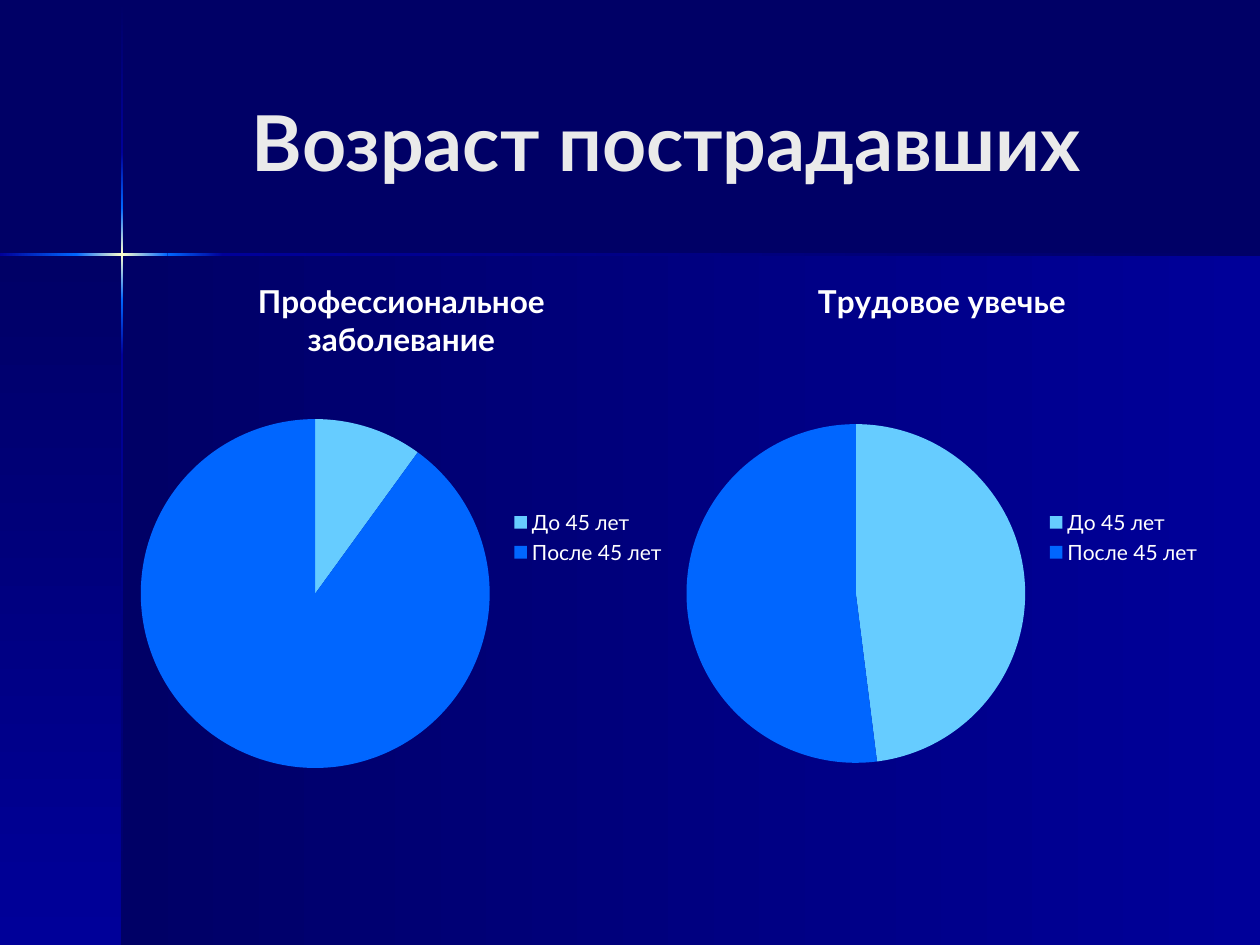
"""Build a slide that compares the age of injured workers in two pie charts."""
import pptx
import pptx.chart.data
import pptx.dml.color
import pptx.enum.chart
import pptx.enum.shapes
import pptx.enum.text
import pptx.oxml.ns
import pptx.util
from lxml import etree

Pt = pptx.util.Pt
qn = pptx.oxml.ns.qn

COLORS = {
    "night": "000066",
    "royal": "000099",
    "azure": "0066FF",
    "sky": "66CCFF",
    "glow": "FFFFCC",
    "title": "EAEAEA",
    "white": "FFFFFF",
}
FONT = "Lato"
WIDTH, HEIGHT = 720, 540
CROSS_X, CROSS_Y = 69.84, 145.44
BEAM = 1.4
FADES = [
    ("night", "royal"),
    ("royal", "azure"),
    ("azure", "glow", "azure"),
    ("azure", "royal"),
    ("royal", "night"),
]
DOWN_EDGES = [0.7, 87.1, 118.8, 171.4, 203, HEIGHT]
ACROSS_EDGES = [0, 43.5, 95.8, 127.4, WIDTH]
CATEGORIES = ["До 45 лет", "После 45 лет"]
PIE_COLORS = ["sky", "azure"]
PIE_LEFT, PIE_MIDDLE = 10, 193.7
CHARTS = [
    ("Профессиональное заболевание", [10, 90], (70.6, 145.4, 317.5, 323.3), 199.4),
    ("Трудовое увечье", [48, 52], (382.3, 145.4, 311.8, 323.3), 193.7),
]


def rgb(name):
    """Return the named colour."""
    return pptx.dml.color.RGBColor.from_string(COLORS[name])


def set_format(target, values):
    """Set each attribute of target from a dict."""
    for name, value in values.items():
        setattr(target, name, value)


def set_font(font, size, color="white", bold=False):
    """Format a text or chart font."""
    set_format(font, {"name": FONT, "size": Pt(size), "bold": bold})
    font.color.rgb = rgb(color)


def add_gradient(slide, box, stops, down):
    """Add a borderless rectangle with evenly spaced gradient stops."""
    sp = slide.shapes.add_shape(
        pptx.enum.shapes.MSO_SHAPE.RECTANGLE, *map(Pt, box)
    )
    sp.shadow.inherit = False
    sp.line.fill.background()
    sp.fill.gradient()
    sp.fill.gradient_angle = 270 if down else 0
    stop_list = sp._element.spPr.find(".//" + qn("a:gsLst"))
    for old in list(stop_list):
        stop_list.remove(old)
    for i, name in enumerate(stops):
        pos = str(100000 * i // (len(stops) - 1))
        gs = etree.SubElement(stop_list, qn("a:gs"), pos=pos)
        etree.SubElement(gs, qn("a:srgbClr"), val=COLORS[name])


def add_backdrop(slide):
    """Add the two panels and the crossing light beams."""
    fade = ("night", "royal")
    panel_height = HEIGHT - CROSS_Y
    add_gradient(slide, (CROSS_X, CROSS_Y, WIDTH - CROSS_X, panel_height), fade, False)
    add_gradient(slide, (0, CROSS_Y, CROSS_X, panel_height), fade, True)
    for start, end, stops in zip(DOWN_EDGES, DOWN_EDGES[1:], FADES):
        box = (CROSS_X - BEAM / 2, start, BEAM, end - start)
        add_gradient(slide, box, stops, True)
    for start, end, stops in zip(ACROSS_EDGES, ACROSS_EDGES[1:], FADES[1:]):
        box = (start, CROSS_Y - BEAM / 2, end - start, BEAM)
        add_gradient(slide, box, stops, False)


def add_title(slide, text):
    """Add the centred slide title."""
    tf = slide.shapes.add_textbox(Pt(84.2), Pt(23.8), Pt(594), Pt(113)).text_frame
    set_format(tf, {
        "word_wrap": True,
        "vertical_anchor": pptx.enum.text.MSO_ANCHOR.MIDDLE,
    })
    p = tf.paragraphs[0]
    p.alignment = pptx.enum.text.PP_ALIGN.CENTER
    r = p.add_run()
    r.text = text
    set_font(r.font, 44, "title", True)


def place_pie(chart, box, diameter):
    """Fix the place of the pie inside its chart."""
    plot_area = chart._chartSpace.find(".//" + qn("c:plotArea"))
    layout = plot_area.find(qn("c:layout"))
    if layout is None:
        layout = etree.Element(qn("c:layout"))
        plot_area.insert(0, layout)
    manual = etree.SubElement(layout, qn("c:manualLayout"))
    values = {
        "layoutTarget": "inner",
        "xMode": "edge",
        "yMode": "edge",
        "x": round(PIE_LEFT / box[2], 3),
        "y": round((PIE_MIDDLE - diameter / 2) / box[3], 3),
        "w": round(diameter / box[2], 3),
        "h": round(diameter / box[3], 3),
    }
    for name, value in values.items():
        etree.SubElement(manual, qn("c:" + name), val=str(value))


def add_pie(slide, title, values, box, diameter):
    """Add a pie chart with a title and a legend."""
    data = pptx.chart.data.CategoryChartData()
    data.categories = CATEGORIES
    data.add_series(title, values)
    chart = slide.shapes.add_chart(
        pptx.enum.chart.XL_CHART_TYPE.PIE, *map(Pt, box), data
    ).chart
    set_font(chart.font, 10)
    set_format(chart, {"has_title": True, "has_legend": True})
    p = chart.chart_title.text_frame.paragraphs[0]
    r = p.add_run()
    r.text = title
    set_font(r.font, 18, bold=True)
    set_format(chart.legend, {
        "position": pptx.enum.chart.XL_LEGEND_POSITION.RIGHT,
        "include_in_layout": False,
    })
    set_font(chart.legend.font, 12)
    plot = chart.plots[0]
    plot.vary_by_categories = True
    for i, name in enumerate(PIE_COLORS):
        fill = plot.series[0].points[i].format.fill
        fill.solid()
        fill.fore_color.rgb = rgb(name)
    place_pie(chart, box, diameter)


def main():
    """Build and save the slide."""
    prs = pptx.Presentation()
    set_format(prs, {"slide_width": Pt(WIDTH), "slide_height": Pt(HEIGHT)})
    slide = prs.slides.add_slide(prs.slide_layouts[6])
    slide.background.fill.solid()
    slide.background.fill.fore_color.rgb = rgb("night")
    add_backdrop(slide)
    add_title(slide, "Возраст пострадавших")
    for title, values, box, diameter in CHARTS:
        add_pie(slide, title, values, box, diameter)
    prs.save("out.pptx")


if __name__ == "__main__":
    main()
